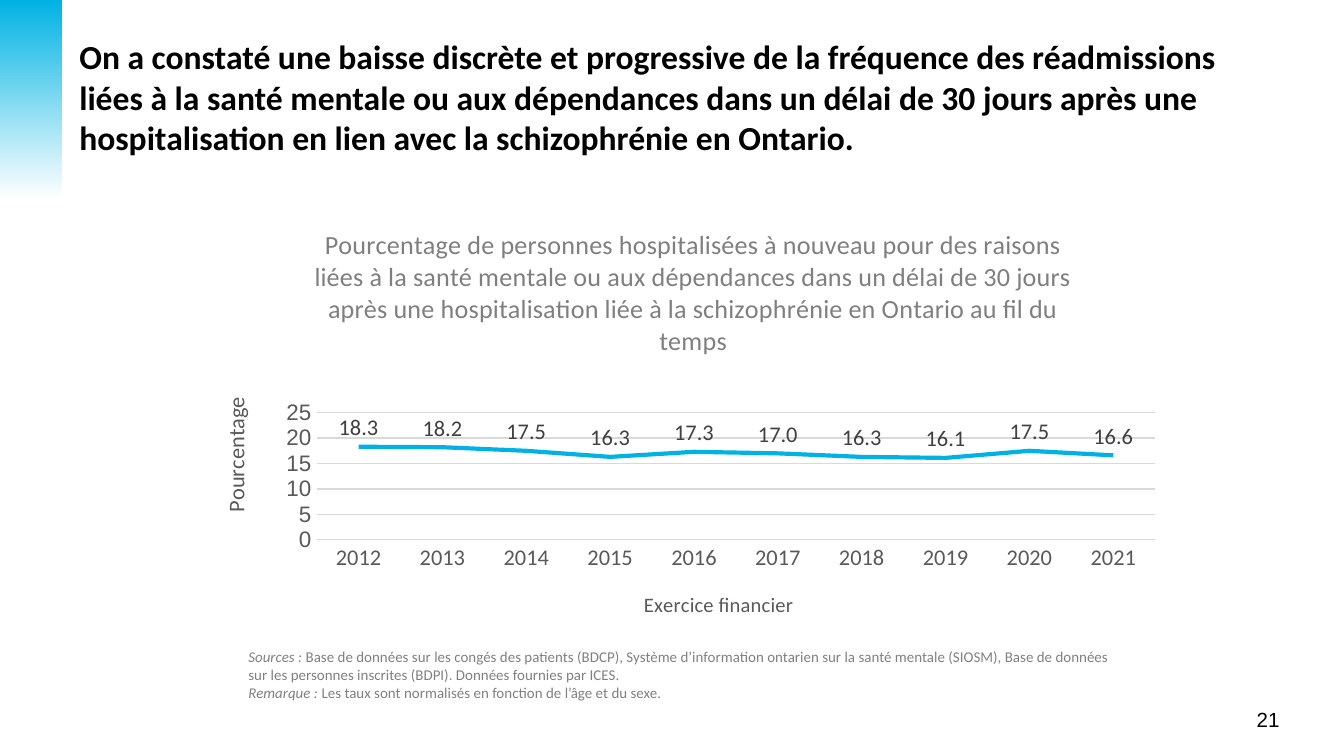
from lxml import etree
from pptx import Presentation
from pptx.chart.data import CategoryChartData
from pptx.dml.color import RGBColor
from pptx.enum.chart import XL_CHART_TYPE, XL_LABEL_POSITION, XL_MARKER_STYLE, XL_TICK_MARK
from pptx.enum.shapes import MSO_SHAPE
from pptx.enum.text import MSO_ANCHOR, MSO_AUTO_SIZE, PP_ALIGN
from pptx.oxml.ns import qn
from pptx.util import Pt

LEFT, RIGHT, CENTER = PP_ALIGN.LEFT, PP_ALIGN.RIGHT, PP_ALIGN.CENTER
TOP, MIDDLE = MSO_ANCHOR.TOP, MSO_ANCHOR.MIDDLE
NO_TICK = XL_TICK_MARK.NONE

BLUE, GRID, DARK, GREY = "00B2E3", "D9D9D9", "595959", "7F7F7F"

HEADLINE = (
    "On a constaté une baisse discrète et progressive de la fréquence des réadmissions "
    "liées à la santé mentale ou aux dépendances dans un délai de 30 jours après une "
    "hospitalisation en lien avec la schizophrénie en Ontario."
)
CHART_TITLE = (
    "Pourcentage de personnes hospitalisées à nouveau pour des raisons liées à la santé "
    "mentale ou aux dépendances dans un délai de 30 jours après une hospitalisation liée "
    "à la schizophrénie en Ontario au fil du temps"
)
YEAR_TITLE, RATE_TITLE = "Exercice financier", "Pourcentage"
FIRST_YEAR = 2012
RATES = [18.3, 18.2, 17.5, 16.3, 17.3, 17.0, 16.3, 16.1, 17.5, 16.6]
NOTES = [
    ("Sources : ", "Base de données sur les congés des patients (BDCP), Système d’information "
     "ontarien sur la santé mentale (SIOSM), Base de données sur les personnes inscrites "
     "(BDPI). Données fournies par ICES."),
    ("Remarque : ", "Les taux sont normalisés en fonction de l’âge et du sexe."),
]
PAGE = "21"


def rgb(color):
    return RGBColor.from_string(color)


def style(font, size, color, name="Calibri", bold=False, italic=False):
    font.size, font.name, font.bold, font.italic = Pt(size), name, bold, italic
    font.color.rgb = rgb(color)


def write(frame, paragraphs, align=LEFT, **font):
    """Fill a frame; a paragraph is a string or an (italic lead, body) pair."""
    for i, content in enumerate(paragraphs):
        paragraph = frame.paragraphs[0] if i == 0 else frame.add_paragraph()
        paragraph.alignment = align
        pieces = (content,) if isinstance(content, str) else content
        for j, piece in enumerate(pieces):
            run = paragraph.add_run()
            run.text = piece
            style(run.font, italic=len(pieces) > 1 and j == 0, **font)


def add_text(slide, box, paragraphs, anchor=TOP, **options):
    frame = slide.shapes.add_textbox(*map(Pt, box)).text_frame
    frame.word_wrap, frame.vertical_anchor = True, anchor
    write(frame, paragraphs, **options)


def place(element, **fractions):
    """Give a chart title or the plot area a fixed place, as fractions of the chart."""
    for old in element.findall(qn("c:layout")):
        element.remove(old)
    layout = etree.Element(qn("c:layout"))
    manual = etree.SubElement(layout, qn("c:manualLayout"))
    settings = {"xMode": "edge", "yMode": "edge", **fractions}
    if "w" in fractions:
        settings = {"layoutTarget": "inner", **settings}
    for tag, value in settings.items():
        etree.SubElement(manual, qn("c:" + tag)).set("val", str(value))
    element.insert(0 if element.find(qn("c:tx")) is None else 1, layout)


def add_rate_chart(slide, box):
    data = CategoryChartData(number_format="0.0")
    data.categories = [str(FIRST_YEAR + i) for i in range(len(RATES))]
    data.add_series("Series 1", RATES)
    chart = slide.shapes.add_chart(XL_CHART_TYPE.LINE, *map(Pt, box), data).chart
    chart.has_legend = False
    style(chart.font, 10, "000000", "Arial")

    chart.has_title = True
    write(chart.chart_title.text_frame, [CHART_TITLE], CENTER, size=14, color=GREY)
    place(chart.chart_title._element, x=0.11, y=0.05)
    place(chart._chartSpace.chart.plotArea, x=0.117, y=0.485, w=0.863, h=0.288)

    years, rates = chart.category_axis, chart.value_axis
    for axis, title, size, x, y, tick_font in (
        (years, YEAR_TITLE, 11, 0.45, 0.88, "Calibri"),
        (rates, RATE_TITLE, 12, 0.014, 0.44, "Arial"),
    ):
        axis.major_tick_mark = axis.minor_tick_mark = NO_TICK
        style(axis.tick_labels.font, 12, DARK, tick_font)
        write(axis.axis_title.text_frame, [title], CENTER, size=size, color=DARK)
        place(axis.axis_title._element, x=x, y=y)
    rates.axis_title.text_frame._txBody.bodyPr.set("rot", "-5400000")

    rates.minimum_scale, rates.maximum_scale, rates.major_unit = 0, 25, 5
    rates.tick_labels.number_format = "0"
    rates.tick_labels.number_format_is_linked = False
    rates.format.line.fill.background()
    for line in (years.format.line, rates.major_gridlines.format.line):
        line.color.rgb, line.width = rgb(GRID), Pt(0.75)

    plot = chart.plots[0]
    plot.vary_by_categories = False
    series = plot.series[0]
    series.smooth = False
    series.marker.style = XL_MARKER_STYLE.NONE
    series.format.line.color.rgb, series.format.line.width = rgb(BLUE), Pt(2.25)
    labels = series.data_labels
    labels.show_value, labels.position = True, XL_LABEL_POSITION.ABOVE
    labels.number_format, labels.number_format_is_linked = "0.0", False
    style(labels.font, 12, "404040")


def main():
    deck = Presentation()
    deck.slide_width, deck.slide_height = Pt(720), Pt(405)
    slide = deck.slides.add_slide(deck.slide_layouts[5])

    band = slide.shapes.add_shape(MSO_SHAPE.RECTANGLE, 0, 0, Pt(33.3), Pt(106.5))
    band.shadow.inherit = False
    band.line.fill.background()
    band.fill.gradient()
    band.fill.gradient_angle = 270
    for stop, color, position in zip(band.fill.gradient_stops, (BLUE, "FFFFFF"), (0, 1)):
        stop.color.rgb, stop.position = rgb(color), position

    title = slide.shapes.title
    title.left, title.top, title.width, title.height = map(Pt, (35.3, 15.8, 649.4, 53.3))
    frame = title.text_frame
    frame.word_wrap, frame.auto_size, frame.vertical_anchor = True, MSO_AUTO_SIZE.NONE, TOP
    write(frame, [HEADLINE], size=18, color="000000", bold=True)

    add_rate_chart(slide, (108.7, 106.6, 520.6, 236.2))
    add_text(slide, (126, 343.4, 486.7, 36), NOTES, size=8, color="808080")
    add_text(slide, (608.4, 375.1, 84.2, 20.9), [PAGE], MIDDLE,
             align=RIGHT, size=11, color="000000", name="Arial")
    deck.save("out.pptx")


if __name__ == "__main__":
    main()
